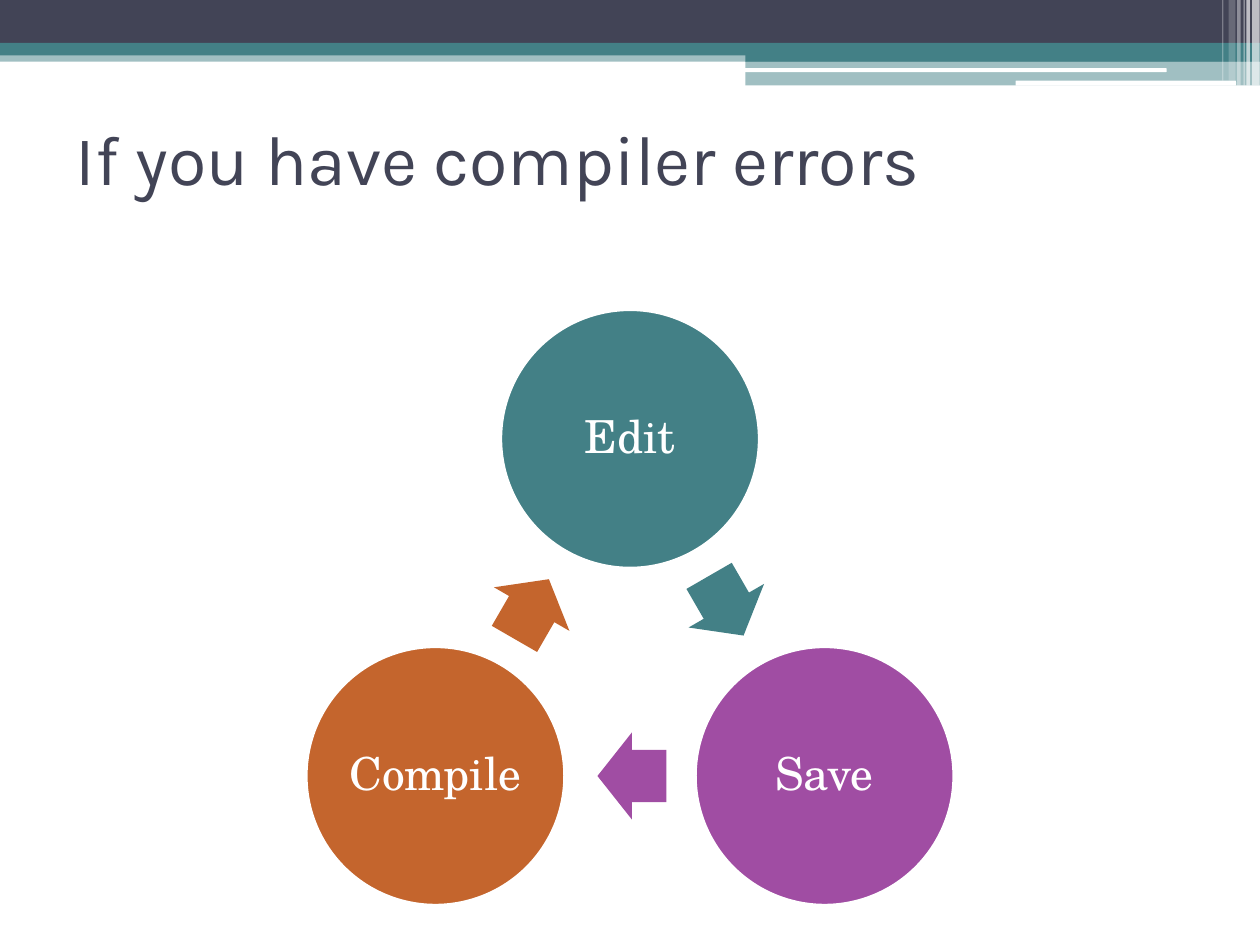
import math

import pptx
import pptx.util
from lxml import etree
from pptx.dml.color import RGBColor
from pptx.enum.shapes import MSO_SHAPE
from pptx.enum.text import MSO_ANCHOR, MSO_AUTO_SIZE, PP_ALIGN
from pptx.oxml.ns import qn

Pt = pptx.util.Pt

WHITE = RGBColor(0xFF, 0xFF, 0xFF)
NAVY = RGBColor(0x42, 0x44, 0x56)
TEAL = RGBColor(0x43, 0x80, 0x86)
PURPLE = RGBColor(0xA0, 0x4D, 0xA3)
ORANGE = RGBColor(0xC4, 0x65, 0x2D)

TITLE = "If you have compiler errors"
STEPS = [("Edit", TEAL), ("Save", PURPLE), ("Compile", ORANGE)]

# left, top, width, height, colour, opacity in percent
BANDS = [
    (0, 28.8, 720, 6.5, TEAL, 50),
    (0, 0, 720, 24.5, NAVY, 100),
    (0, 24.5, 720, 7.2, TEAL, 100),
    (426, 28, 294, 7.2, TEAL, 100),
    (426, 34.9, 294, 14, TEAL, 50),
]
PILLS = [
    (425.5, 39, 241.2, 2.2, WHITE, 100),
    (580.3, 46.1, 126, 2.9, WHITE, 100),
]
# left, width, height, opacity in percent
STRIPES = [
    (715.5, 4.3, 48.9, 65),
    (712.2, 2, 48.9, 65),
    (710.6, 0.7, 48.9, 60),
    (707, 2, 48.9, 40),
    (702, 4, 46.1, 20),
    (698.4, 0.7, 46.1, 30),
]

MID_X, MID_Y = 360, 379.2   # centre of the cycle
RADIUS = 128.4              # cycle centre to circle centre
DISC = 147.6                # circle diameter
ARROW_W, ARROW_H = 39.4, 49.8
ARROW_BACK = 1.1            # arrows sit slightly behind the midpoint


def add_shape(slide, kind, box, color, alpha=100):
    shape = slide.shapes.add_shape(kind, *(Pt(v) for v in box))
    shape.shadow.inherit = False
    shape.line.fill.background()
    shape.fill.solid()
    shape.fill.fore_color.rgb = color
    if alpha < 100:
        tint = shape._element.spPr.find(".//" + qn("a:srgbClr"))
        etree.SubElement(tint, qn("a:alpha")).set("val", str(alpha * 1000))
    return shape


def set_font(font, name, size, color):
    font.name = name
    font.size = Pt(size)
    font.color.rgb = color


def add_header(slide):
    for *box, color, alpha in BANDS:
        add_shape(slide, MSO_SHAPE.RECTANGLE, box, color, alpha)
    for *box, color, alpha in PILLS:
        add_shape(slide, MSO_SHAPE.ROUNDED_RECTANGLE, box, color, alpha)
    for left, width, height, alpha in STRIPES:
        box = (left, 0, width, height)
        add_shape(slide, MSO_SHAPE.RECTANGLE, box, WHITE, alpha)


def add_title(slide):
    title = slide.shapes.title
    title.left, title.top = Pt(36), Pt(48.2)
    title.width, title.height = Pt(648), Pt(84.2)
    frame = title.text_frame
    frame.text = TITLE
    frame.auto_size = MSO_AUTO_SIZE.NONE
    frame.vertical_anchor = MSO_ANCHOR.MIDDLE
    para = frame.paragraphs[0]
    para.alignment = PP_ALIGN.LEFT
    set_font(para.font, "Karla", 40, NAVY)


def add_disc(slide, x, y, text, color):
    box = (x - DISC / 2, y - DISC / 2, DISC, DISC)
    disc = add_shape(slide, MSO_SHAPE.OVAL, box, color)
    disc.line.color.rgb = WHITE
    disc.line.width = Pt(1.5)
    frame = disc.text_frame
    frame.text = text
    frame.word_wrap = False
    frame.vertical_anchor = MSO_ANCHOR.MIDDLE
    frame.margin_left = frame.margin_right = Pt(2.6)
    frame.margin_top = frame.margin_bottom = Pt(2.6)
    para = frame.paragraphs[0]
    para.alignment = PP_ALIGN.CENTER
    para.line_spacing = 0.9
    set_font(para.font, "TeX Gyre Schola", 26, WHITE)


def add_arrow(slide, start, end, color):
    angle = math.atan2(end[1] - start[1], end[0] - start[0])
    x = (start[0] + end[0]) / 2 - ARROW_BACK * math.cos(angle)
    y = (start[1] + end[1]) / 2 - ARROW_BACK * math.sin(angle)
    box = (x - ARROW_W / 2, y - ARROW_H / 2, ARROW_W, ARROW_H)
    arrow = add_shape(slide, MSO_SHAPE.RIGHT_ARROW, box, color)
    arrow.adjustments[0] = 0.6
    arrow.adjustments[1] = 0.5
    arrow.rotation = round(math.degrees(angle)) % 360


def add_cycle(slide):
    count = len(STEPS)
    turns = [math.tau * i / count for i in range(count)]
    spots = [(MID_X + RADIUS * math.sin(t), MID_Y - RADIUS * math.cos(t))
             for t in turns]
    for i, (text, color) in enumerate(STEPS):
        add_disc(slide, *spots[i], text, color)
        add_arrow(slide, spots[i], spots[(i + 1) % count], color)


def main():
    deck = pptx.Presentation()
    deck.slide_width, deck.slide_height = Pt(720), Pt(540)
    slide = deck.slides.add_slide(deck.slide_layouts[5])
    add_header(slide)
    add_title(slide)
    add_cycle(slide)
    deck.save("out.pptx")


if __name__ == "__main__":
    main()
